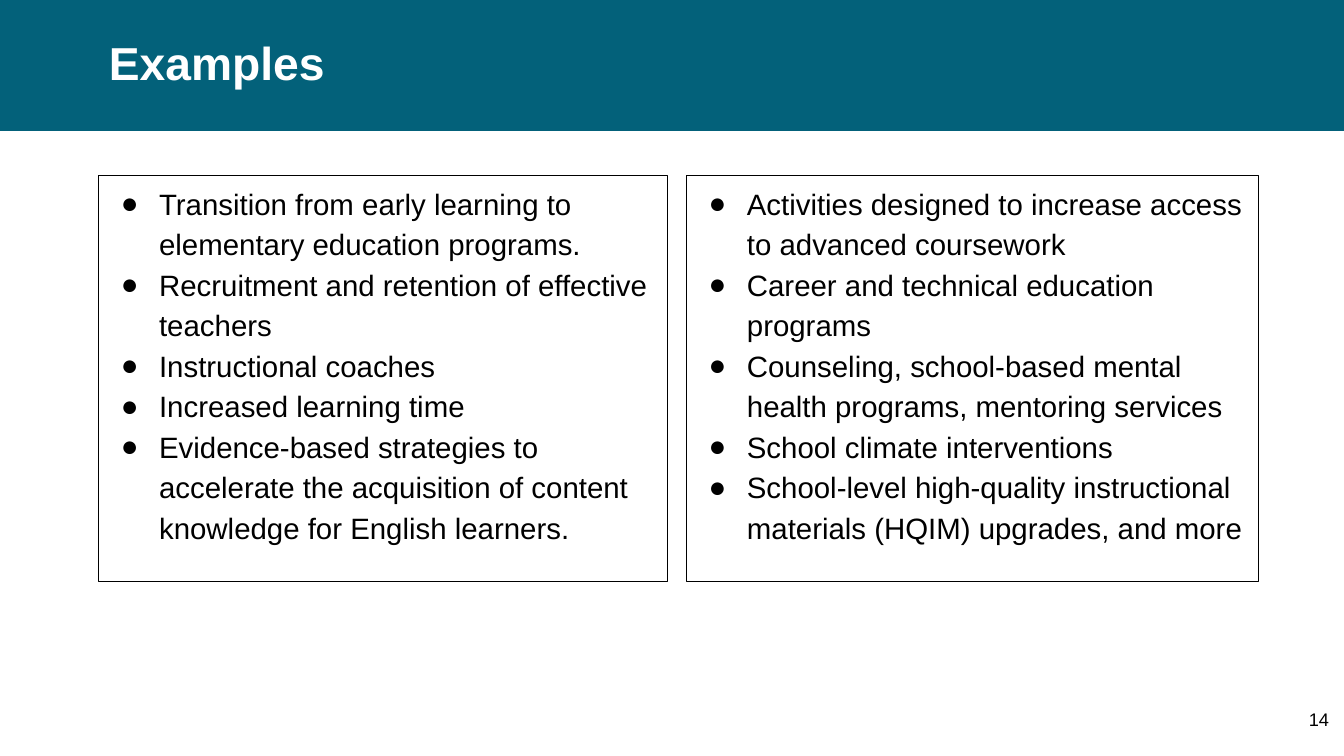
from dataclasses import dataclass

from lxml import etree
from pptx import Presentation
from pptx import util as u
from pptx.dml.color import RGBColor
from pptx.enum import shapes, text
from pptx.oxml.ns import qn


@dataclass(frozen=True)
class Theme:
    font: str = "Arial"
    teal: RGBColor = RGBColor(0x03, 0x61, 0x7A)
    white: RGBColor = RGBColor(0xFF, 0xFF, 0xFF)
    black: RGBColor = RGBColor(0, 0, 0)
    head: float = 33
    body: float = 21
    note: float = 13


@dataclass(frozen=True)
class Panel:
    left: float
    width: float
    items: tuple[str, ...]


THEME = Theme()
BAND = 1.3
TOP, HEIGHT = 1.74, 4.03
PANELS = (
    Panel(0.98, 5.64, (
        "Transition from early learning to elementary education programs.",
        "Recruitment and retention of effective teachers",
        "Instructional coaches",
        "Increased learning time",
        "Evidence-based strategies to accelerate the acquisition of content "
        "knowledge for English learners.",
    )),
    Panel(6.81, 5.67, (
        "Activities designed to increase access to advanced coursework",
        "Career and technical education programs",
        "Counseling, school-based mental health programs, mentoring services",
        "School climate interventions",
        "School-level high-quality instructional materials (HQIM) upgrades, "
        "and more",
    )),
)


def place(shape, left: float, top: float, width: float, height: float) -> None:
    shape.left, shape.top = u.Inches(left), u.Inches(top)
    shape.width, shape.height = u.Inches(width), u.Inches(height)


def style(para, size: float, color: RGBColor, bold: bool = False) -> None:
    for run in para.runs:
        font = run.font
        font.name, font.size, font.bold = THEME.font, u.Pt(size), bold
        font.color.rgb = color


def bullet(para) -> None:
    """Give the paragraph a hanging black dot."""
    props = para._p.get_or_add_pPr()
    props.set("marL", str(u.Inches(0.5)))
    props.set("indent", str(u.Inches(-0.38)))
    tint = etree.SubElement(props, qn("a:buClr"))
    etree.SubElement(tint, qn("a:srgbClr"), val=str(THEME.black))
    etree.SubElement(props, qn("a:buFont"), typeface=THEME.font)
    etree.SubElement(props, qn("a:buChar"), char="●")


def add_head(slide, words: str) -> None:
    title = slide.shapes.title
    band = slide.shapes.add_shape(
        shapes.MSO_SHAPE.RECTANGLE, 0, 0, u.Inches(13.33), u.Inches(BAND))
    band.shadow.inherit = False
    band.fill.solid()
    band.fill.fore_color.rgb = THEME.teal
    band.line.fill.background()
    title.element.addprevious(band.element)

    place(title, 0.98, 0, 11.5, BAND)
    frame = title.text_frame
    frame.text = words
    frame.vertical_anchor = text.MSO_ANCHOR.MIDDLE
    para = frame.paragraphs[0]
    para.alignment = text.PP_ALIGN.LEFT
    para.line_spacing = 0.9
    style(para, THEME.head, THEME.white, bold=True)


def add_panel(slide, panel: Panel) -> None:
    box = slide.shapes.add_textbox(0, 0, 0, 0)
    place(box, panel.left, TOP, panel.width, HEIGHT)
    box.line.color.rgb = THEME.black
    box.line.width = u.Pt(0.75)
    frame = box.text_frame
    frame.word_wrap = True
    frame.text = "\n".join(panel.items)
    for para in frame.paragraphs:
        para.line_spacing = 1.15
        bullet(para)
        style(para, THEME.body, THEME.black)


def add_number(slide, words: str) -> None:
    box = slide.shapes.add_textbox(0, 0, 0, 0)
    place(box, 12.48, 6.93, 0.8, 0.57)
    frame = box.text_frame
    frame.word_wrap = True
    frame.margin_top = frame.margin_bottom = u.Inches(0.1)
    frame.text = words
    para = frame.paragraphs[0]
    para.alignment = text.PP_ALIGN.RIGHT
    style(para, THEME.note, THEME.black)


def main() -> None:
    deck = Presentation()
    deck.slide_width, deck.slide_height = u.Inches(13.33), u.Inches(7.5)
    slide = deck.slides.add_slide(deck.slide_layouts[5])
    add_head(slide, "Examples")
    for panel in PANELS:
        add_panel(slide, panel)
    add_number(slide, "14")
    deck.save("out.pptx")


if __name__ == "__main__":
    main()
